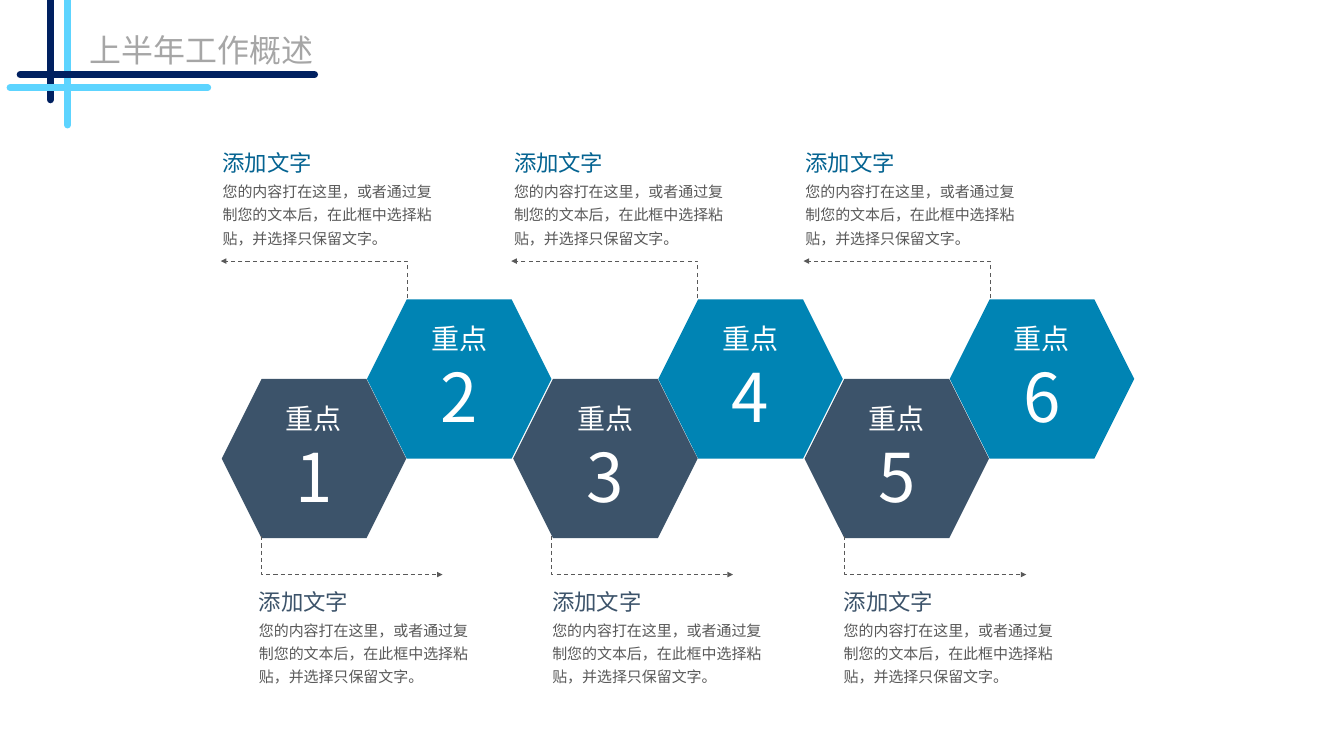
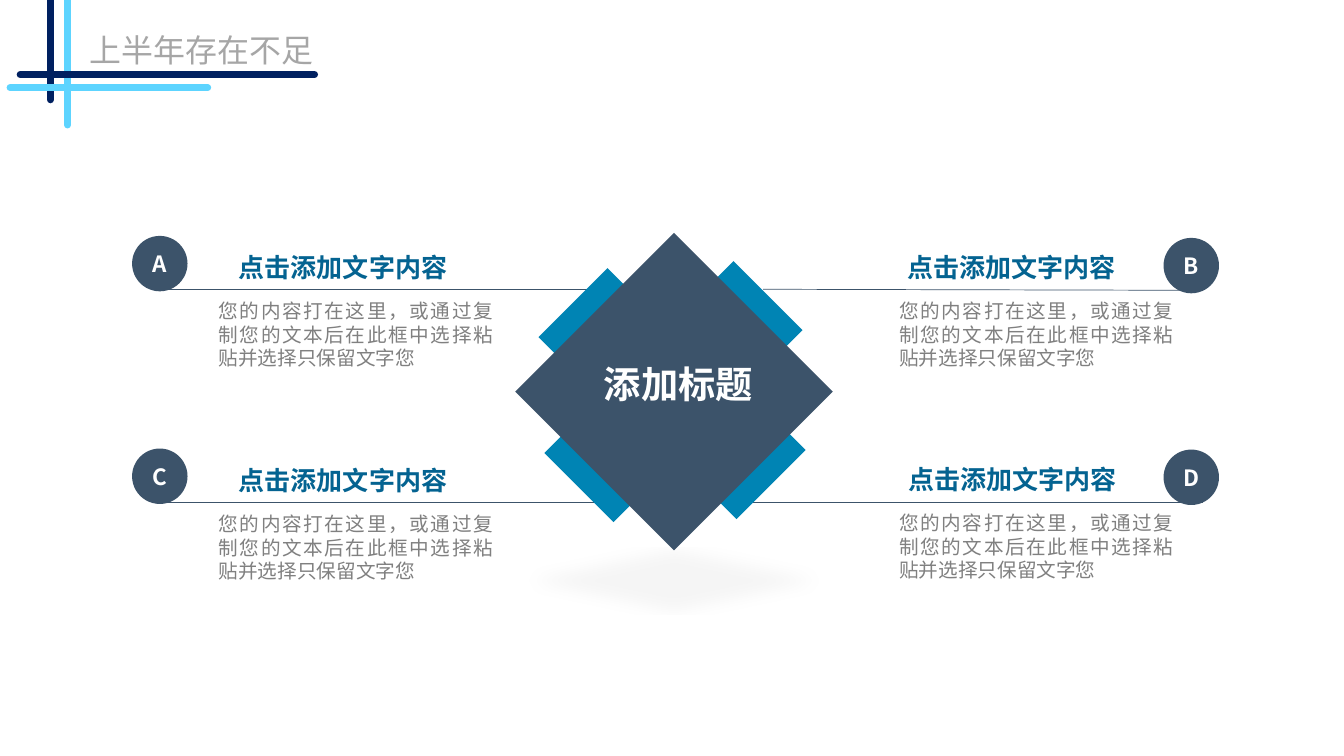
"""Build two half-year review slides: a hexagon chain and a four-point diamond."""
import pptx
import pptx.util
import pptx.dml.color
import pptx.enum.dml
import pptx.enum.shapes
import pptx.enum.text
import pptx.oxml
import pptx.oxml.ns
import lxml.etree

Inches = pptx.util.Inches
Pt = pptx.util.Pt
qn = pptx.oxml.ns.qn
KIND = pptx.enum.shapes.MSO_SHAPE
ALIGN = pptx.enum.text.PP_ALIGN
MIDDLE = pptx.enum.text.MSO_ANCHOR.MIDDLE
NOTO = "Noto Sans CJK SC"
NAVY, SKY, SLATE, BLUE, TEAL = "002060", "5DD4FF", "3C536A", "0084B4", "046391"
WHITE, DARK, GREY, PALE = "FFFFFF", "595959", "808080", "A6A6A6"


def ink(code):
    return pptx.dml.color.RGBColor.from_string(code)


def write(page, box, text="", kind=None, fill=None, sizes=(16,), color=WHITE, face=NOTO,
          bold=False, align=ALIGN.LEFT, space=1.0, anchor=None, pad=(0.1, 0.05), wrap=True):
    place = [Inches(n) for n in box]
    if kind is None:
        shape = page.shapes.add_textbox(*place)
    else:
        shape = page.shapes.add_shape(kind, *place)
        shape.shadow.inherit = False
        shape.fill.solid()
        shape.fill.fore_color.rgb = ink(fill)
        shape.line.fill.background()
    if not text:
        return shape
    frame = shape.text_frame
    frame.word_wrap = wrap
    frame.margin_left = frame.margin_right = Inches(pad[0])
    frame.margin_top = frame.margin_bottom = Inches(pad[1])
    if anchor is not None:
        frame.vertical_anchor = anchor
    for i, (words, size) in enumerate(zip(text.split("\n"), sizes)):
        para = frame.add_paragraph() if i else frame.paragraphs[0]
        para.alignment = align
        para.line_spacing = space
        run = para.add_run()
        run.text = words
        run.font.size = Pt(size)
        run.font.bold = bold
        run.font.name = face
        run.font.color.rgb = ink(color)
        east = lxml.etree.SubElement(run.font._element, qn("a:ea"))
        east.set("typeface", face)
    return shape


deck = pptx.Presentation()
deck.slide_width = Inches(13.33)
deck.slide_height = Inches(7.5)

marks = [
    (0.5, 0, 0.5, 0.99, NAVY, 5),
    (0.67, 0, 0.67, 1.24, SKY, 5),
    (3.12, 0.74, 0.2, 0.74, NAVY, 5),
    (2.06, 0.87, 0.1, 0.87, SKY, 5),
]
rules = [
    (1.62, 4.98, 6.29, 4.98, SLATE, 0.5),
    (6.96, 4.98, 11.93, 4.98, SLATE, 0.5),
    (7.57, 2.87, 11.82, 2.88, SLATE, 0.5),
    (1.62, 2.87, 6.29, 2.87, SLATE, 0.5),
]
pages = []
for title, face, lines in (("上半年工作概述", "Arial", marks),
                           ("上半年存在不足", NOTO, marks + rules)):
    page = deck.slides.add_slide(deck.slide_layouts[6])
    pages.append(page)
    write(page, (0.89, 0.3, 4.09, 0.38), title, sizes=(22.8,), color=PALE, face=face,
          anchor=MIDDLE, pad=(0, 0))
    for x1, y1, x2, y2, color, width in lines:
        line = page.shapes.add_connector(
            pptx.enum.shapes.MSO_CONNECTOR.STRAIGHT,
            Inches(x1), Inches(y1), Inches(x2), Inches(y2))
        line.line.color.rgb = ink(color)
        line.line.width = Pt(width)
        if width == 5:
            line.line._ln.set("cap", "rnd")
        lxml.etree.SubElement(line._element.spPr, qn("a:effectLst"))
chain, core = pages

note = "您的内容打在这里，或者通过复制您的文本后，在此框中选择粘贴，并选择只保留文字。"
cells = [
    (6, 9.42, 9.82, 7.89),
    (5, 7.98, 8.38, 8.27),
    (4, 6.53, 6.92, 5),
    (3, 5.09, 5.47, 5.38),
    (2, 3.64, 4.04, 2.11),
    (1, 2.2, 2.59, 2.47),
]
for count, x, turn, left in cells:
    if count % 2:
        top, fill, color, head = 3.76, SLATE, SLATE, 5.7
        bend = [(turn, 5.32), (turn, 5.7), (turn + 1.8, 5.7)]
    else:
        top, fill, color, head = 2.97, BLUE, TEAL, 1.35
        bend = [(turn, 2.96), (turn, 2.59), (turn - 1.85, 2.59)]
    write(chain, (x, top, 1.83, 1.58), f"重点\n{count}", kind=KIND.HEXAGON, fill=fill,
          sizes=(20, 48), align=ALIGN.CENTER, anchor=MIDDLE)

    dots = [(Inches(a), Inches(b)) for a, b in bend]
    path = chain.shapes.build_freeform(*dots[0])
    path.add_line_segments(dots[1:], close=False)
    arrow = path.convert_to_shape()
    arrow.shadow.inherit = False
    arrow.fill.background()
    arrow.line.color.rgb = ink(DARK)
    arrow.line.width = Pt(0)
    arrow.line.dash_style = pptx.enum.dml.MSO_LINE.DASH
    tip = lxml.etree.SubElement(arrow.line._ln, qn("a:tailEnd"))
    for key, value in (("type", "triangle"), ("w", "sm"), ("len", "sm")):
        tip.set(key, value)

    write(chain, (left, head, 1.87, 0.36), "添加文字", color=color, space=1.5, pad=(0.1, 0))
    write(chain, (left, head + 0.36, 2.37, 0.78), note, sizes=(10.7,), color=DARK, space=1.3)

for x, y in ((5.34, 2.66), (5.4, 3.81), (6.62, 3.78), (6.59, 2.59)):
    write(core, (x, y, 1.37, 1.37), kind=KIND.DIAMOND, fill=BLUE)
gem = write(core, (5.11, 2.31, 3.15, 3.15), kind=KIND.DIAMOND, fill=SLATE)
gem._element.spPr.find(qn("a:effectLst")).append(pptx.oxml.parse_xml(
    '<a:outerShdw xmlns:a="http://schemas.openxmlformats.org/drawingml/2006/main"'
    ' blurRad="152400" dist="0" dir="5400000" sx="90000" sy="-19000" rotWithShape="0">'
    '<a:srgbClr val="000000"><a:alpha val="4000"/></a:srgbClr></a:outerShdw>'))
write(core, (5.88, 3.53, 1.7, 0.55), "添加标题", sizes=(26.6,), bold=True,
      align=ALIGN.CENTER, wrap=False)

body = "您的内容打在这里，或通过复制您的文本后在此框中选择粘贴并选择只保留文字您"
points = [
    ("A", 1.31, 2.34, 2.27, 2.45, 2.07),
    ("B", 11.54, 2.36, 8.9, 2.45, 8.82),
    ("C", 1.31, 4.45, 2.27, 4.56, 2.07),
    ("D", 11.54, 4.46, 8.91, 4.55, 8.82),
]
for mark, x, y, left, head, edge in points:
    write(core, (x, y, 0.55, 0.55), mark, kind=KIND.FLOWCHART_CONNECTOR, fill=SLATE,
          bold=True, align=ALIGN.CENTER, anchor=MIDDLE)
    write(core, (left, head, 2.29, 0.42), "点击添加文字内容", sizes=(18.6,), color=TEAL,
          bold=True, wrap=False)
    write(core, (edge, head + 0.47, 2.92, 0.81), body, sizes=(14,), color=GREY,
          align=ALIGN.JUSTIFY)

deck.save("out.pptx")
